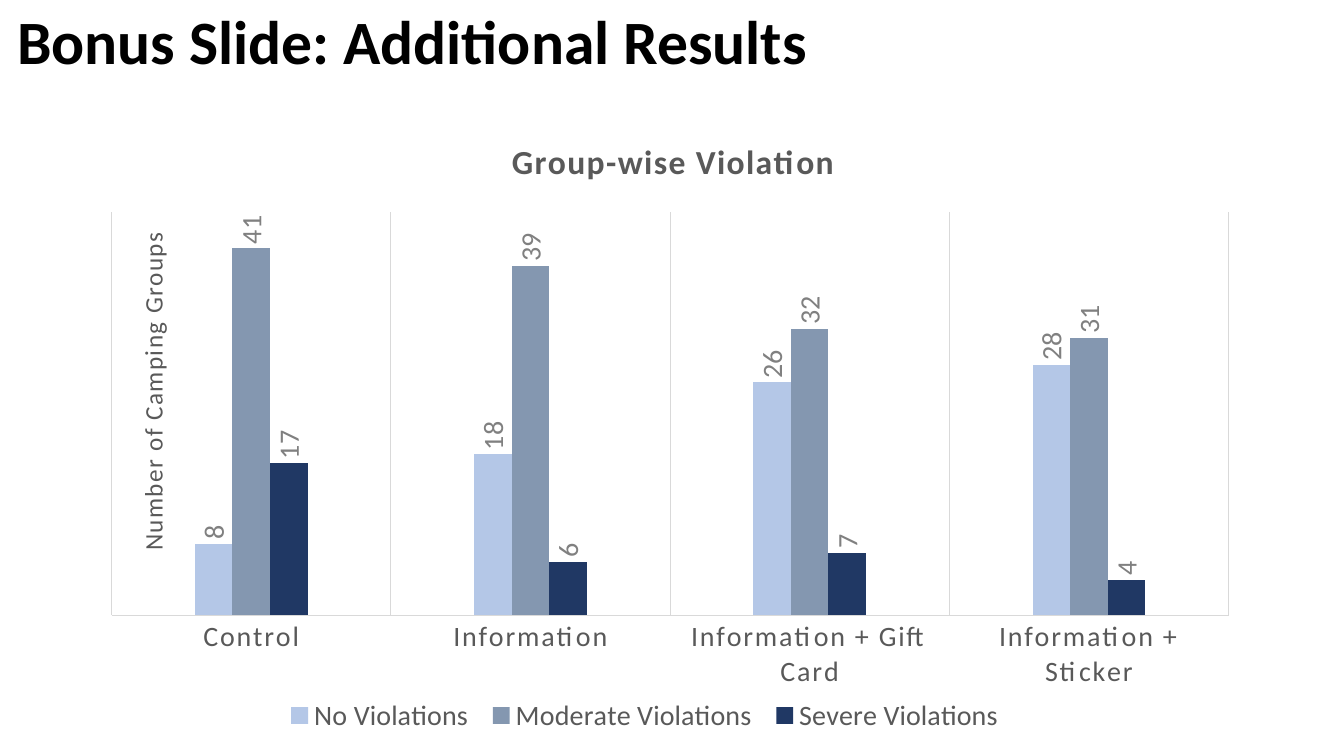
"""Build a slide with a clustered column chart of violations per camping group."""
from lxml.etree import SubElement
from pptx import Presentation
from pptx.chart.data import CategoryChartData
from pptx.dml.color import RGBColor
from pptx.enum.chart import XL_CHART_TYPE, XL_LABEL_POSITION, XL_LEGEND_POSITION, XL_TICK_MARK
from pptx.enum.text import MSO_ANCHOR, PP_ALIGN
from pptx.oxml import parse_xml
from pptx.oxml.ns import nsdecls, qn
from pptx.util import Inches, Pt

TITLE = "Bonus Slide: Additional Results"
CHART_TITLE = "Group-wise Violation"
AXIS_TITLE = "Number of Camping Groups"
GROUPS = ["Control", "Information", "Information + Gift Card", "Information + Sticker"]
SERIES = [
    ("No Violations", (8, 18, 26, 28), "light"),
    ("Moderate Violations", (41, 39, 32, 31), "medium"),
    ("Severe Violations", (17, 6, 7, 4), "dark"),
]
COLORS = {
    "black": "000000", "text": "595959", "label": "808080", "line": "D9D9D9",
    "light": "B4C7E7", "medium": "8497B0", "dark": "203864",
}
FONT = "Calibri"
UPRIGHT = "-5400000"


def color(name):
    return RGBColor.from_string(COLORS[name])


def style_font(font, size, color_name, bold=False):
    font.name, font.size, font.bold = FONT, Pt(size), bold
    font.color.rgb = color(color_name)


def style_line(line):
    line.color.rgb = color("line")
    line.width = Pt(0.75)


def turn_upright(element):
    for body in element.iter(qn("a:bodyPr")):
        body.set("rot", UPRIGHT)
        body.set("vert", "horz")


def place(parent, index, inner=False, **fractions):
    """Give a chart part a manual layout in fractions of the chart."""
    for old in parent.findall(qn("c:layout")):
        parent.remove(old)
    layout = parse_xml(f"<c:layout {nsdecls('c')}><c:manualLayout/></c:layout>")
    settings = {"layoutTarget": "inner"} if inner else {}
    settings.update(xMode="edge", yMode="edge", **fractions)
    for name, value in settings.items():
        SubElement(layout[0], qn(f"c:{name}")).set("val", str(value))
    parent.insert(index, layout)


def write_chart_title(title, text, size, bold, spacing, x, y):
    paragraph = title.text_frame.paragraphs[0]
    run = paragraph.add_run()
    run.text = text
    style_font(run.font, size, "text", bold)
    paragraph.runs[0]._r.get_or_add_rPr().set("spc", spacing)
    place(title._element, 1, x=x, y=y)


def add_title(slide):
    title = slide.shapes.title
    title.left, title.top = Inches(0.07), Inches(-0.28)
    title.width, title.height = Inches(11.5), Inches(1.45)
    title.text_frame.vertical_anchor = MSO_ANCHOR.MIDDLE
    paragraph = title.text_frame.paragraphs[0]
    paragraph.alignment, paragraph.line_spacing = PP_ALIGN.LEFT, 0.9
    run = paragraph.add_run()
    run.text = TITLE
    style_font(run.font, 44, "black", True)


def add_violation_chart(slide):
    data = CategoryChartData()
    data.categories = GROUPS
    for name, values, _ in SERIES:
        data.add_series(name, values)
    chart = slide.shapes.add_chart(
        XL_CHART_TYPE.COLUMN_CLUSTERED,
        Inches(0.46), Inches(1.07), Inches(11.99), Inches(6.28), data,
    ).chart
    style_font(chart.font, 20, "black")
    write_chart_title(chart.chart_title, CHART_TITLE, 24, True, "100", 0.38, 0.04)

    plot = chart.plots[0]
    plot.gap_width, plot.overlap, plot.vary_by_categories = 444, 0, False
    for series, (_, _, color_name) in zip(plot.series, SERIES):
        series.format.fill.solid()
        series.format.fill.fore_color.rgb = color(color_name)
        labels = series.data_labels
        labels.show_value = True
        labels.position = XL_LABEL_POSITION.OUTSIDE_END
        style_font(labels.font, 20, "label")
        turn_upright(labels._element)

    groups_axis = chart.category_axis
    groups_axis.major_tick_mark = groups_axis.minor_tick_mark = XL_TICK_MARK.NONE
    groups_axis.has_major_gridlines = True
    style_line(groups_axis.major_gridlines.format.line)
    style_line(groups_axis.format.line)
    style_font(groups_axis.tick_labels.font, 20, "text")
    for properties in groups_axis._element.iter(qn("a:defRPr")):
        properties.set("spc", "120")

    count_axis = chart.value_axis
    count_axis.minimum_scale, count_axis.maximum_scale = 0, 45
    count_axis.has_major_gridlines = False
    count_axis.visible = False
    write_chart_title(count_axis.axis_title, AXIS_TITLE, 18, False, "100", 0.07, 0.19)
    turn_upright(count_axis.axis_title._element)

    chart.has_legend = True
    legend = chart.legend
    legend.position = XL_LEGEND_POSITION.TOP
    legend.include_in_layout = False
    style_font(legend.font, 20, "text")
    place(legend._element, 1, x=0.19, y=0.92, w=0.61, h=0.08)
    plot_area = chart._chartSpace.find(f".//{qn('c:plotArea')}")
    place(plot_area, 0, inner=True, x=0.054, y=0.165, w=0.924, h=0.637)


def main():
    presentation = Presentation()
    presentation.slide_width, presentation.slide_height = Inches(13.33), Inches(7.5)
    slide = presentation.slides.add_slide(presentation.slide_layouts[5])
    add_title(slide)
    add_violation_chart(slide)
    presentation.save("out.pptx")


if __name__ == "__main__":
    main()
